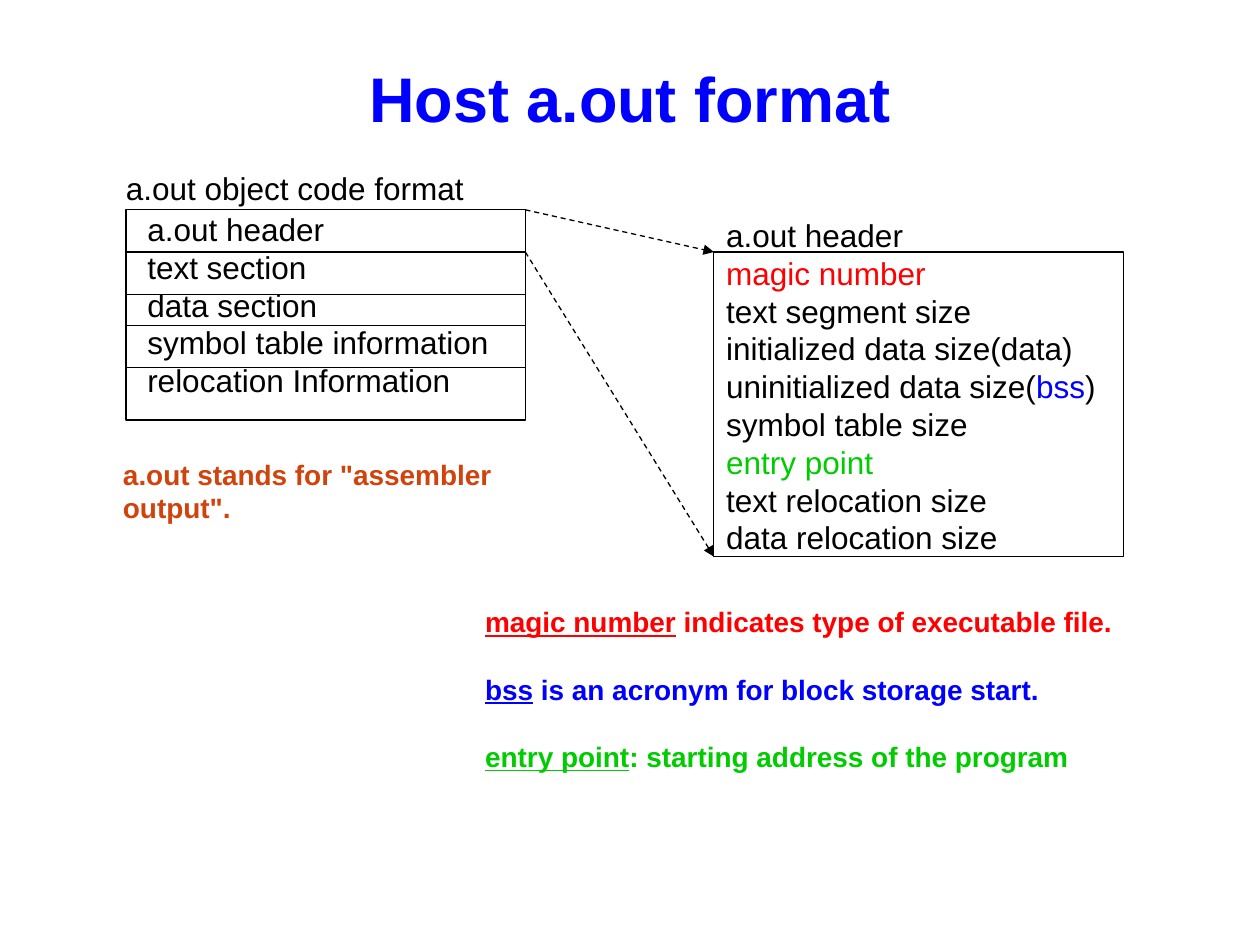
from lxml import etree
from pptx import Presentation
from pptx.dml.color import RGBColor
from pptx.enum.dml import MSO_LINE
from pptx.enum.shapes import MSO_CONNECTOR, MSO_SHAPE
from pptx.enum.text import MSO_ANCHOR, MSO_AUTO_SIZE, PP_ALIGN
from pptx.oxml.ns import qn
from pptx.util import Cm, Pt

RECT = MSO_SHAPE.RECTANGLE
LINE = MSO_CONNECTOR.STRAIGHT
DASH = MSO_LINE.DASH
MIDDLE = MSO_ANCHOR.MIDDLE
CENTER = PP_ALIGN.CENTER
FIT = MSO_AUTO_SIZE.SHAPE_TO_FIT_TEXT

BLACK, RED, BLUE = "000000", "FF0000", "0000FF"
GREEN, RUST = "00CC00", "D0430C"


def color(value):
    return RGBColor.from_string(value)


def write(para, text, size=18, fill=BLACK, bold=False, under=False):
    run = para.add_run()
    run.text = text
    font = run.font
    font.name = "Arial"
    font.size = Pt(size)
    font.bold = bold
    font.underline = under
    font.color.rgb = color(fill)


class Page:
    def __init__(self, deck, width=0.75, ink=BLACK):
        self.slide = deck.slides.add_slide(deck.slide_layouts[5])
        self.shapes = self.slide.shapes
        self.width = Pt(width)
        self.ink = color(ink)

    def title(self, text, x, y, w, h):
        shape = self.shapes.title
        shape.left, shape.top, shape.width, shape.height = map(Cm, (x, y, w, h))
        frame = shape.text_frame
        frame.vertical_anchor = MIDDLE
        para = frame.paragraphs[0]
        para.alignment = CENTER
        write(para, text, size=36, fill=BLUE, bold=True)

    def text(self, rows, x, y, w, h, size=18, bold=False, gap=0):
        frame = self.shapes.add_textbox(*map(Cm, (x, y, w, h))).text_frame
        frame.word_wrap = False
        frame.auto_size = FIT
        for i, row in enumerate(rows):
            para = frame.add_paragraph() if i else frame.paragraphs[0]
            para.line_spacing = Pt(size * 1.2)
            para.space_before = Pt(gap if i else 0)
            for text, style in row:
                write(para, text, size=size, bold=bold, **style)

    def stroke(self, shape):
        shape.line.color.rgb = self.ink
        shape.line.width = self.width

    def frame(self, x, y, w, h):
        shape = self.shapes.add_shape(RECT, *map(Cm, (x, y, w, h)))
        shape.shadow.inherit = False
        shape.fill.background()
        self.stroke(shape)

    def rule(self, x1, y1, x2, y2, arrow=False):
        line = self.shapes.add_connector(LINE, *map(Cm, (x1, y1, x2, y2)))
        self.stroke(line)
        if arrow:
            line.line.dash_style = DASH
            etree.SubElement(line.line._ln, qn("a:tailEnd"), type="triangle")
        etree.SubElement(line._element.spPr, qn("a:effectLst"))


def plain(*names):
    return [[(name, {})] for name in names]


def note(term, rest, fill):
    return [(term, {"fill": fill, "under": True}), (rest, {"fill": fill})]


def main():
    deck = Presentation()
    deck.slide_width, deck.slide_height = Cm(25.4), Cm(19.05)
    page = Page(deck)
    page.title("Host a.out format", 1.27, 0.76, 22.86, 2.41)

    left, right, top, low = 2.54, 10.59, 4.23, 8.47
    page.text(plain("a.out header", "text section", "data section",
                    "symbol table information", "relocation Information"),
              2.72, 4.11, 7.39, 4.06)
    page.frame(left, top, right - left, low - top)
    cuts = (5.08, 5.93, 6.56, 7.41)
    for y in cuts:
        page.rule(left, y, right, y)

    side, head, foot = 14.39, cuts[0], 11.22
    fields = [
        *plain("a.out header"),
        [("magic number", {"fill": RED})],
        *plain("text segment size", "initialized data size(data)"),
        [("uninitialized data size(", {}), ("bss", {"fill": BLUE}), (")", {})],
        *plain("symbol table size"),
        [("entry point", {"fill": GREEN})],
        *plain("text relocation size", "data relocation size"),
    ]
    page.text(fields, side, 4.23, 7.95, 7.11)
    page.frame(side, head, 8.26, foot - head)
    page.rule(right, top, side, head, arrow=True)
    page.rule(right, cuts[0], side, foot, arrow=True)

    page.text(plain("a.out object code format"), 2.29, 3.28, 7.32, 1.02)
    notes = [
        note("magic number", " indicates type of executable file.", RED),
        note("bss", " is an acronym for block storage start.", BLUE),
        note("entry point", ": starting address of the program", GREEN),
    ]
    page.text(notes, 9.53, 12.07, 13.21, 3.66, size=16, bold=True, gap=19.2)
    page.text([[('a.out stands for "assembler output".', {"fill": RUST})]],
              2.23, 9.09, 10.24, 0.94, size=16, bold=True)
    deck.save("out.pptx")


if __name__ == "__main__":
    main()
